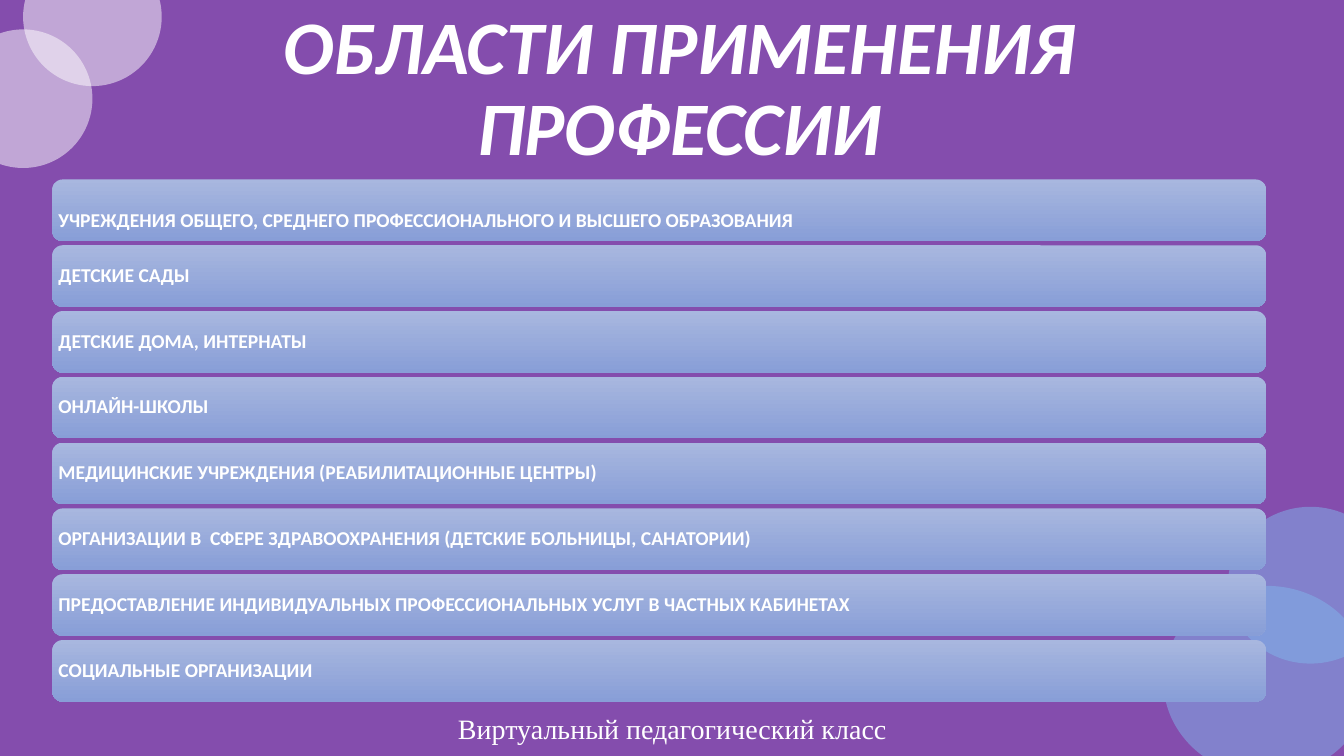
import pptx
import pptx.util
import pptx.dml.color
import pptx.enum.shapes
import pptx.enum.text
import pptx.oxml
from dataclasses import dataclass
from pptx.oxml import ns

TITLE = "ОБЛАСТИ ПРИМЕНЕНИЯ ПРОФЕССИИ"
FOOTER = "Виртуальный педагогический класс"
FIELDS = [
    "УЧРЕЖДЕНИЯ ОБЩЕГО, СРЕДНЕГО ПРОФЕССИОНАЛЬНОГО И ВЫСШЕГО ОБРАЗОВАНИЯ",
    "ДЕТСКИЕ САДЫ",
    "ДЕТСКИЕ ДОМА, ИНТЕРНАТЫ",
    "ОНЛАЙН-ШКОЛЫ",
    "МЕДИЦИНСКИЕ УЧРЕЖДЕНИЯ (РЕАБИЛИТАЦИОННЫЕ ЦЕНТРЫ)",
    "ОРГАНИЗАЦИИ В  СФЕРЕ ЗДРАВООХРАНЕНИЯ (ДЕТСКИЕ БОЛЬНИЦЫ, САНАТОРИИ)",
    "ПРЕДОСТАВЛЕНИЕ ИНДИВИДУАЛЬНЫХ ПРОФЕССИОНАЛЬНЫХ УСЛУГ В ЧАСТНЫХ КАБИНЕТАХ",
    "СОЦИАЛЬНЫЕ ОРГАНИЗАЦИИ",
]


@dataclass(frozen=True)
class Theme:
    background: str = "844DAD"
    text: str = "FFFFFF"
    bubble_blue: str = "81B6EB"
    bubble_white: str = "FFFFFF"
    bar_top: str = "A8B7DF"
    bar_bottom: str = "889ED7"
    font: str = "Calibri"
    footer_font: str = "Times New Roman"
    title_size: int = 54
    bar_size: int = 14
    footer_size: int = 20


THEME = Theme()
Pt = pptx.util.Pt
ALIGN = pptx.enum.text.PP_ALIGN
SHAPE = pptx.enum.shapes.MSO_SHAPE

# left, top, width, height, colour
BUBBLES = [
    (831, 418.5, 147.5, 136, THEME.bubble_blue),
    (-33, 21, 99, 99, THEME.bubble_white),
    (16.5, -37.5, 99, 99, THEME.bubble_white),
    (877, 362, 118, 112, THEME.bubble_blue),
]
BAR_LEFT, BAR_TOP, BAR_WIDTH, BAR_HEIGHT, BAR_PITCH = 37.4, 128.2, 867, 44, 47
BAR_INSET = 2.2
FIRST_BAR_DROP = 15.4
TITLE_LIFT = 59.4


def rgb(code):
    return pptx.dml.color.RGBColor.from_string(code)


def box(left, top, width, height):
    return Pt(left), Pt(top), Pt(width), Pt(height)


def write(frame, text, size, font, align, bold=False, italic=False, spacing=1.0):
    frame.text = text
    frame.word_wrap = True
    frame.auto_size = pptx.enum.text.MSO_AUTO_SIZE.NONE
    frame.vertical_anchor = pptx.enum.text.MSO_ANCHOR.MIDDLE
    paragraph = frame.paragraphs[0]
    paragraph.alignment = align
    paragraph.line_spacing = spacing
    run_font = paragraph.runs[0].font
    run_font.size, run_font.name = Pt(size), font
    run_font.bold, run_font.italic = bold, italic
    run_font.color.rgb = rgb(THEME.text)


def add_plain_shape(slide, kind, place):
    shape = slide.shapes.add_shape(kind, *box(*place))
    shape.shadow.inherit = False
    shape.line.fill.background()
    return shape


def add_bubble(slide, place, colour):
    """Draw a half-transparent ellipse."""
    bubble = add_plain_shape(slide, SHAPE.OVAL, place)
    bubble.fill.solid()
    bubble.fill.fore_color.rgb = rgb(colour)
    tint = bubble.fill._xPr.find(".//" + ns.qn("a:srgbClr"))
    tint.append(pptx.oxml.parse_xml(f'<a:alpha {ns.nsdecls("a")} val="50000"/>'))


def add_bar(slide, index, field):
    top = BAR_TOP + index * BAR_PITCH
    bar = add_plain_shape(slide, SHAPE.ROUNDED_RECTANGLE,
                          (BAR_LEFT, top, BAR_WIDTH, BAR_HEIGHT))
    bar.fill.gradient()
    bar.fill.gradient_angle = 270
    for stop, colour in zip(bar.fill.gradient_stops, (THEME.bar_top, THEME.bar_bottom)):
        stop.color.rgb = rgb(colour)
    frame = bar.text_frame
    write(frame, field, THEME.bar_size, THEME.font, ALIGN.LEFT, bold=True, spacing=0.9)
    frame.margin_left = frame.margin_right = Pt(BAR_INSET)
    frame.margin_top = Pt(BAR_INSET + (FIRST_BAR_DROP if index == 0 else 0))
    frame.margin_bottom = Pt(BAR_INSET)


def main():
    deck = pptx.Presentation()
    deck.slide_width, deck.slide_height = Pt(960), Pt(540)
    slide = deck.slides.add_slide(deck.slide_layouts[5])
    slide.background.fill.solid()
    slide.background.fill.fore_color.rgb = rgb(THEME.background)

    for *place, colour in BUBBLES:
        add_bubble(slide, place, colour)

    footer = slide.shapes.add_textbox(*box(294.5, 509, 371.5, 22.5))
    write(footer.text_frame, FOOTER, THEME.footer_size, THEME.footer_font, ALIGN.CENTER)

    title = slide.shapes.title
    title.left, title.top, title.width, title.height = box(66.2, 28.8, 838, 131)
    write(title.text_frame, TITLE, THEME.title_size, THEME.font, ALIGN.CENTER,
          bold=True, italic=True, spacing=0.9)
    title.text_frame.margin_top = Pt(3.6)
    title.text_frame.margin_bottom = Pt(3.6 + TITLE_LIFT)

    for index, field in enumerate(FIELDS):
        add_bar(slide, index, field)

    deck.save("out.pptx")


if __name__ == "__main__":
    main()
